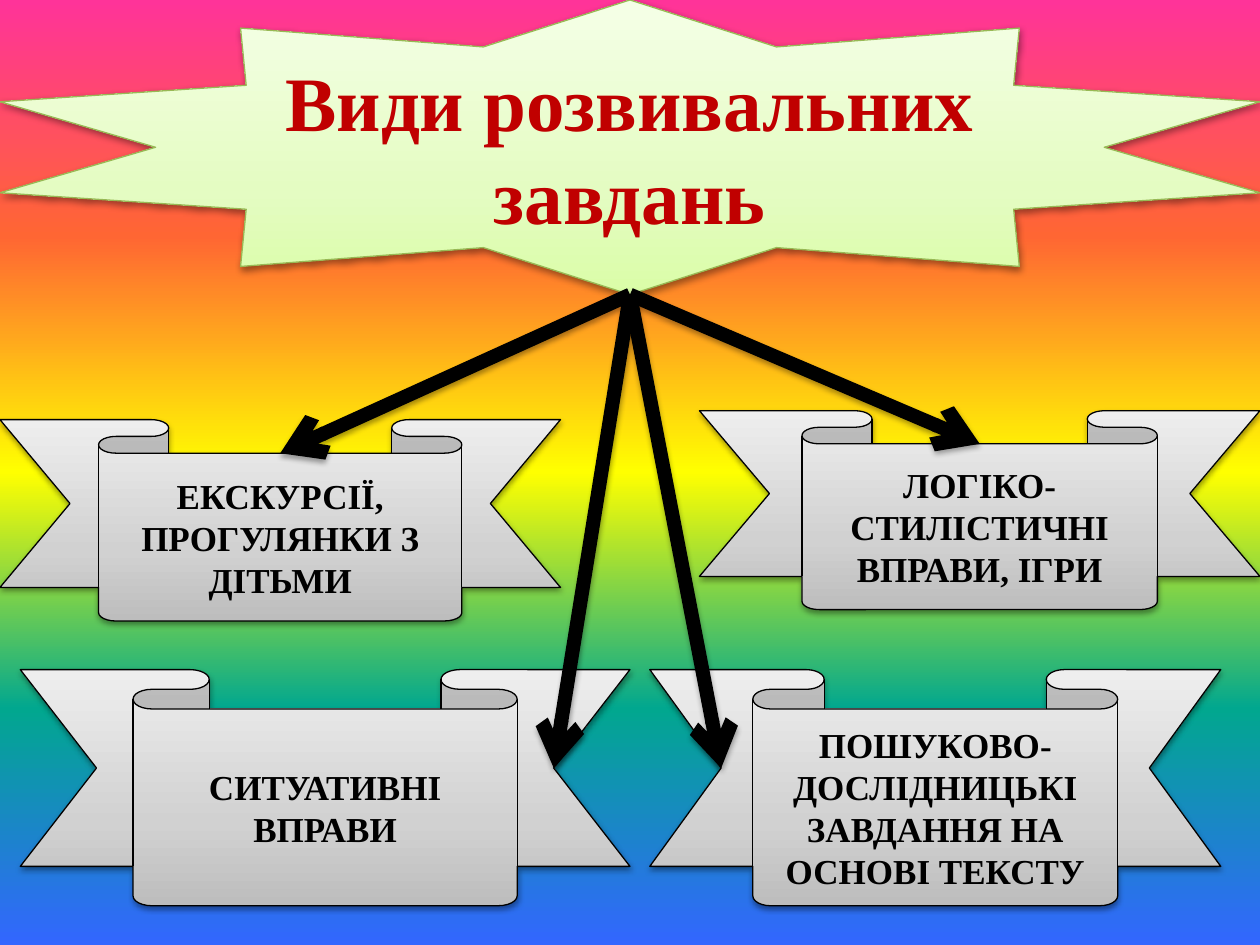
"""Builds a slide with a star title and arrows to four ribbons of exercise types."""
from dataclasses import dataclass

from lxml import etree
from pptx import Presentation
from pptx import util as u
from pptx.dml.color import RGBColor
from pptx.enum import shapes, text
from pptx.oxml.ns import qn

Stops = tuple[tuple[int, str], ...]


@dataclass(frozen=True)
class Theme:
    font: str = "Times New Roman"
    title_size: int = 44
    label_size: int = 20
    title_color: str = "C00000"
    ink: str = "000000"
    star_line: str = "98B955"
    outline: float = 0.75
    arrow_width: float = 8
    sky: Stops = ((0, "FF3399"), (25, "FF6633"), (50, "FFFF00"),
                  (75, "01A78F"), (100, "3366FF"))
    star: Stops = ((0, "DAFDA7"), (35, "E4FCC2"), (100, "F5FFE7"))
    ribbon: Stops = ((0, "BDBDBD"), (35, "D1D1D1"), (100, "EEEEEE"))


@dataclass(frozen=True)
class Box:
    left: float
    top: float
    width: float
    height: float


@dataclass(frozen=True)
class Ribbon:
    box: Box
    band: float
    lines: tuple[str, ...]
    target: str

    def arrow_end(self) -> tuple[float, float]:
        b = self.box
        if self.target == "top":
            return b.left + b.width / 2, b.top + b.height * FOLD
        notch = 1 / 8 if self.target == "left" else 7 / 8
        return b.left + b.width * notch, b.top + b.height * (1 - FOLD) / 2


T = Theme()
FOLD = 1 / 6
STAR = Box(0, 0, 25.4, 5.94)
RIBBONS = (
    Ribbon(Box(0, 8.46, 11.3, 4.06), 0.648,
           ("ЕКСКУРСІЇ,", "ПРОГУЛЯНКИ З ДІТЬМИ"), "top"),
    Ribbon(Box(14.1, 8.28, 11.3, 4.01), 0.634,
           ("ЛОГІКО-СТИЛІСТИЧНІ ВПРАВИ, ІГРИ",), "top"),
    Ribbon(Box(0.41, 13.5, 12.29, 4.76), 0.63,
           ("СИТУАТИВНІ ВПРАВИ",), "right"),
    Ribbon(Box(13.1, 13.5, 11.51, 4.76), 0.639,
           ("ПОШУКОВО-ДОСЛІДНИЦЬКІ ЗАВДАННЯ НА ОСНОВІ ТЕКСТУ",), "left"),
)


def add_gradient(fill, element, stops: Stops, angle: int) -> None:
    fill.gradient()
    fill.gradient_angle = angle
    gs_lst = element.find(".//" + qn("a:gsLst"))
    gs_lst.clear()
    for pos, color in stops:
        gs = etree.SubElement(gs_lst, qn("a:gs"), pos=str(pos * 1000))
        etree.SubElement(gs, qn("a:srgbClr"), val=color)


def add_shadow(effects, distance: int, opacity: int) -> None:
    shadow = etree.SubElement(effects, qn("a:outerShdw"), blurRad="40000",
                              dist=str(distance), dir="5400000", rotWithShape="0")
    color = etree.SubElement(shadow, qn("a:srgbClr"), val=T.ink)
    etree.SubElement(color, qn("a:alpha"), val=str(opacity * 1000))


def write(tf, lines: tuple[str, ...], *, size: int, color: str) -> None:
    tf.word_wrap = True
    tf.vertical_anchor = text.MSO_ANCHOR.MIDDLE
    for i, line in enumerate(lines):
        p = tf.add_paragraph() if i else tf.paragraphs[0]
        p.alignment = text.PP_ALIGN.CENTER
        r = p.add_run()
        r.text = line
        r.font.name, r.font.size, r.font.bold = T.font, u.Pt(size), True
        r.font.color.rgb = RGBColor.from_string(color)


def add_figure(s, kind, box: Box, adjustments: tuple[float, ...],
               stops: Stops, line: str):
    sp = s.shapes.add_shape(kind, u.Cm(box.left), u.Cm(box.top),
                            u.Cm(box.width), u.Cm(box.height))
    for i, value in enumerate(adjustments):
        sp.adjustments[i] = value
    add_gradient(sp.fill, sp.element, stops, 90)
    sp.line.color.rgb = RGBColor.from_string(line)
    sp.line.width = u.Pt(T.outline)
    sp.shadow.inherit = False
    add_shadow(sp.element.spPr.find(qn("a:effectLst")), 20000, 38)
    return sp


def add_arrow(s, start: tuple[float, float], end: tuple[float, float]) -> None:
    cx = s.shapes.add_connector(shapes.MSO_CONNECTOR.STRAIGHT,
                                *(u.Cm(v) for v in start + end))
    cx.line.color.rgb = RGBColor.from_string(T.ink)
    cx.line.width = u.Pt(T.arrow_width)
    sp_pr = cx.element.spPr
    etree.SubElement(sp_pr.find(qn("a:ln")), qn("a:tailEnd"), type="arrow")
    add_shadow(etree.SubElement(sp_pr, qn("a:effectLst")), 23000, 35)


def main() -> None:
    prs = Presentation()
    prs.slide_width, prs.slide_height = u.Cm(25.4), u.Cm(19.05)
    s = prs.slides.add_slide(prs.slide_layouts[6])
    add_gradient(s.background.fill, s.element, T.sky, 270)
    star = add_figure(s, shapes.MSO_SHAPE.STAR_10_POINT, STAR, (0.358,),
                      T.star, T.star_line)
    write(star.text_frame, ("Види розвивальних завдань",),
          size=T.title_size, color=T.title_color)
    for ribbon in RIBBONS:
        sp = add_figure(s, shapes.MSO_SHAPE.DOWN_RIBBON, ribbon.box,
                        (FOLD, ribbon.band), T.ribbon, T.ink)
        write(sp.text_frame, ribbon.lines, size=T.label_size, color=T.ink)
    for ribbon in RIBBONS:
        add_arrow(s, (STAR.width / 2, STAR.height), ribbon.arrow_end())
    prs.save("out.pptx")


if __name__ == "__main__":
    main()
